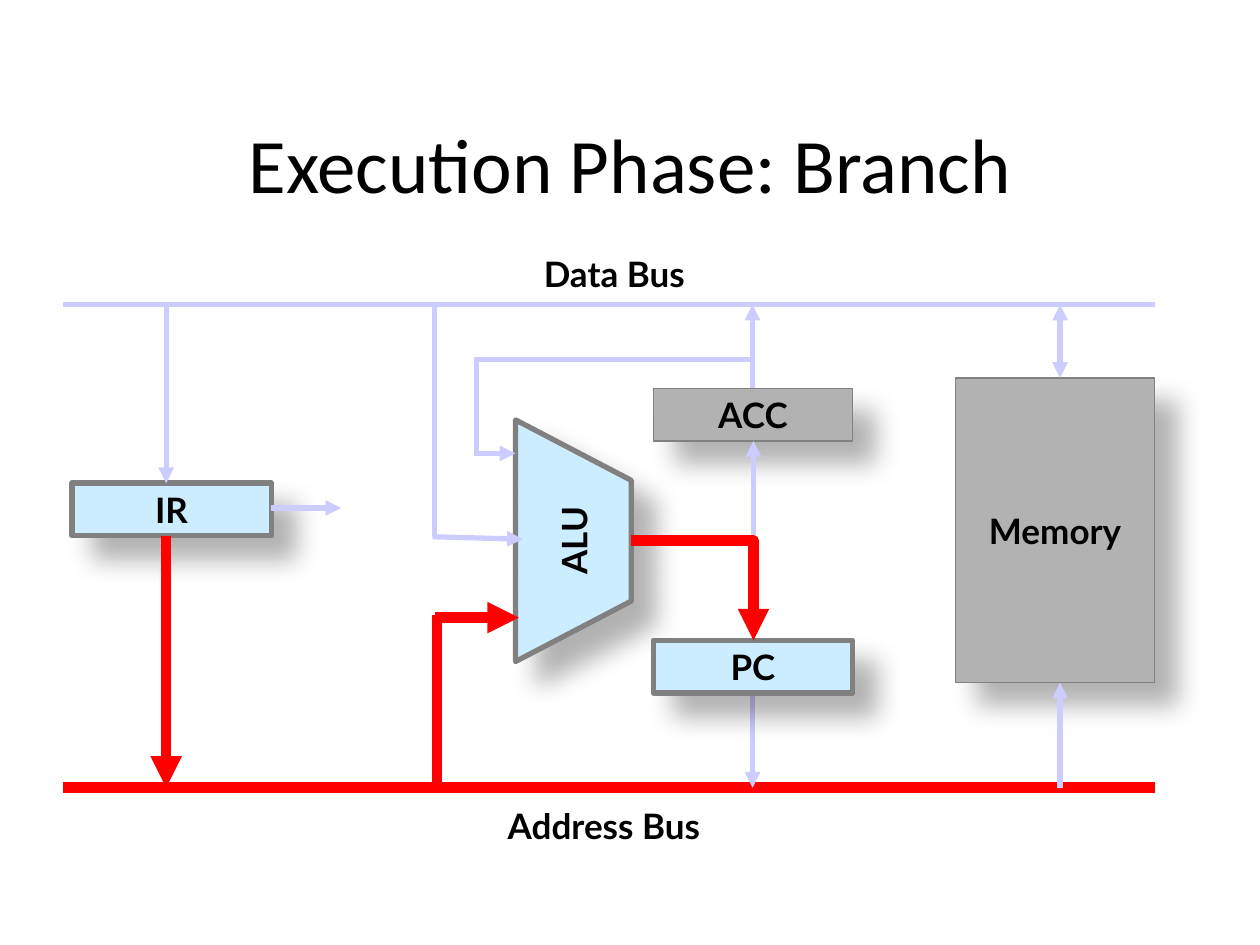
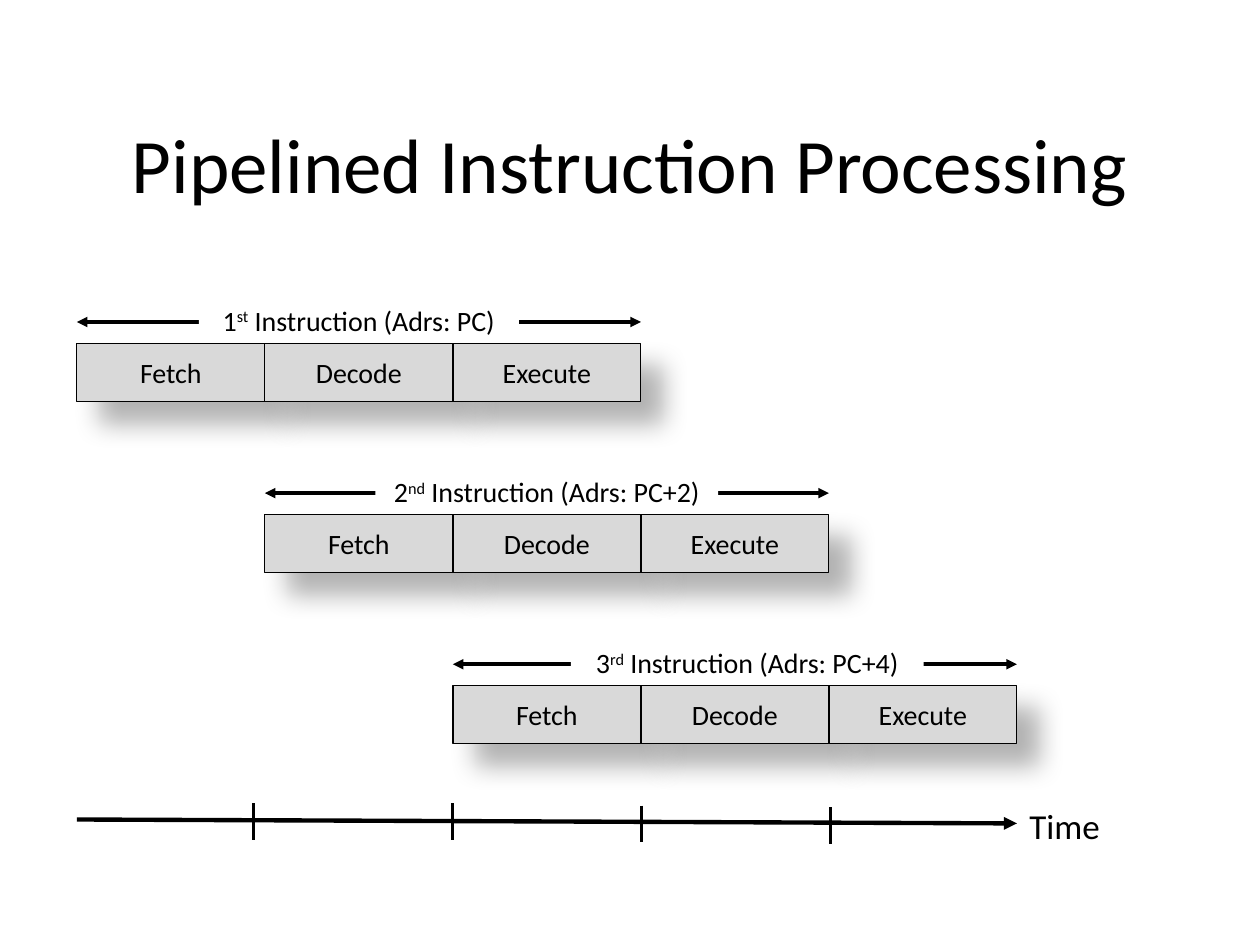
from lxml.etree import SubElement
from pptx import Presentation
from pptx.dml.color import RGBColor
from pptx.enum.shapes import MSO_CONNECTOR, MSO_SHAPE
from pptx.enum.text import MSO_ANCHOR, PP_ALIGN
from pptx.oxml.ns import qn
from pptx.util import Cm, Pt

COLORS = {"ink": "000000", "paper": "FFFFFF", "idle": "CCCCFF", "live": "FF0000",
          "edge": "808080", "off": "B2B2B2", "on": "CCECFF", "cell": "D9D9D9"}


def color(name):
    return RGBColor.from_string(COLORS[name])


# Shared parts
def write(shape, text, size, font="Calibri", bold=False, align=PP_ALIGN.CENTER,
          anchor=MSO_ANCHOR.MIDDLE):
    frame = shape.text_frame
    frame.word_wrap = True
    frame.vertical_anchor = anchor
    frame.text = text
    para = frame.paragraphs[0]
    para.alignment = align
    style(para.runs[0], size, font, bold)
    return para


def style(run, size, font="Calibri", bold=False):
    run.font.size, run.font.name, run.font.bold = Pt(size), font, bold
    run.font.color.rgb = color("ink")


def label(slide, x, y, w, h, text, size, **look):
    area = slide.shapes.add_textbox(Cm(x), Cm(y), Cm(w), Cm(h))
    return write(area, text, size, **look)


def title(slide, text):
    label(slide, 1.91, 1.7, 21.59, 3.18, text, 44)


def paint(shape, fill, edge, width):
    shape.fill.solid()
    shape.fill.fore_color.rgb = color(fill)
    shape.line.color.rgb = color(edge)
    shape.line.width = Pt(width)
    # Soft shadow to the lower right
    shape.shadow.inherit = False
    effects = shape._element.spPr.find(qn("a:effectLst"))
    cast = SubElement(effects, qn("a:outerShdw"), blurRad=str(Pt(15)), dist=str(Pt(18)),
                      dir="2700000", algn="ctr", rotWithShape="0")
    tint = SubElement(cast, qn("a:srgbClr"), val=COLORS["ink"])
    SubElement(tint, qn("a:alpha"), val="30000")


def block(slide, x, y, w, h, fill, edge, width):
    shape = slide.shapes.add_shape(MSO_SHAPE.RECTANGLE, Cm(x), Cm(y), Cm(w), Cm(h))
    paint(shape, fill, edge, width)
    return shape


def wire(slide, x1, y1, x2, y2, hue, width, ends="", bent=False):
    kind = MSO_CONNECTOR.ELBOW if bent else MSO_CONNECTOR.STRAIGHT
    line = slide.shapes.add_connector(kind, Cm(x1), Cm(y1), Cm(x2), Cm(y2))
    line.line.color.rgb = color(hue)
    line.line.width = Pt(width)
    props = line._element.spPr
    if bent:  # one corner only
        props.find(qn("a:prstGeom")).set("prst", "bentConnector2")
    for mark, tag in (("<", "a:headEnd"), (">", "a:tailEnd")):
        if mark in ends:
            SubElement(props.find(qn("a:ln")), qn(tag), type="triangle")
    SubElement(props, qn("a:effectLst"))


# Slide 1: data path between two buses
def alu(slide, mid_x, mid_y, w, h):
    left, top = mid_x - w / 2, mid_y - h / 2
    points = [(0, 0), (w, 0), (w * 0.75, h), (w * 0.25, h)]
    points = [(Cm(left + x), Cm(top + y)) for x, y in points]
    build = slide.shapes.build_freeform(*points[0], scale=1.0)
    build.add_line_segments(points[1:], close=True)
    shape = build.convert_to_shape()
    shape.rotation = 270
    paint(shape, "on", "edge", 3)
    write(shape, "ALU", 20, "Lato", True)


def datapath(slide, left, top):
    wide, low, unit_w, unit_h = 22.01, 9.74, 4.02, 1.06
    mem_x, acc_x, ir_x, mid = 20.1, 13.9, 2.08, 4.76
    mem_y, mem_h, acc_y, pc_y, ir_y = 1.48, 6.14, 1.69, 6.77, 3.6

    def run(x1, y1, x2, y2, ends="", live=False, bent=False):
        hue, width = ("live", 6) if live else ("idle", 3)
        wire(slide, left + x1, top + y1, left + x2, top + y2, hue, width, ends, bent)

    # Buses and the line that leaves PC
    run(0, low, wide, low, live=True)
    run(0, 0, wide, 0)
    run(acc_x, 7.2, acc_x, low, ">")
    for text, x, y in (("Data Bus", 7.2, -1.18), ("Address Bus", 6.99, 9.95)):
        label(slide, left + x, top + y, 7.83, 1.09, text, 20, font="Lato", bold=True,
              anchor=MSO_ANCHOR.TOP)

    # Units
    alu(slide, left + 10.29, top + mid, 4.87, 2.33)
    for text, x, y, h, live in (("Memory", 17.99, mem_y, mem_h, False),
                                ("IR", 0.18, ir_y, unit_h, True),
                                ("ACC", 11.9, acc_y, unit_h, False),
                                ("PC", 11.9, pc_y, unit_h, True)):
        fill, width = ("on", 3) if live else ("off", 0.75)
        shape = block(slide, left + x, top + y, unit_w, h, fill, "edge", width)
        write(shape, text, 20, "Lato", True)

    # Memory and IR wires
    run(mem_x, low, mem_x, mem_y + mem_h, ">")
    run(mem_x, mem_y, mem_x, 0, "<>")
    run(ir_x, 0, ir_x, ir_y, ">")
    run(ir_x, ir_y + unit_h, ir_x, low, ">", live=True)
    run(4.19, 4.1, 5.61, 4.1, ">")
    # ALU inputs
    run(acc_x, acc_y, acc_x, 0, ">")
    run(7.49, 6.31, 9.19, 6.31, ">", live=True)
    run(7.45, 4.68, 9.27, 4.73, ">")
    run(7.54, 6.26, 7.54, low, live=True)
    run(7.49, 4.68, 7.49, 0)
    run(acc_x, 1.1, 8.36, 1.1)
    run(8.33, 1.05, 8.33, 3)
    run(8.28, 3, 9.12, 3, ">")
    # ALU outputs
    run(11.45, mid, acc_x + 0.02, acc_y + unit_h, ">", bent=True)
    run(11.45, mid, acc_x + 0.02, pc_y, ">", live=True, bent=True)


# Slide 2: staggered instructions over a time axis
def stages(slide, left, top, step, order, rest, width, shift):
    wire(slide, left, top - 0.43, left + 3 * step, top - 0.43, "ink", 2, "<>")
    x = left + (3 * step - width) / 2 + shift
    area = slide.shapes.add_textbox(Cm(x), Cm(top - 0.93), Cm(width), Cm(0.93))
    area.fill.solid()
    area.fill.fore_color.rgb = color("paper")
    para = write(area, order[0], 16, anchor=MSO_ANCHOR.TOP)
    for text in (order[1:], f" Instruction (Adrs: {rest})"):
        run = para.add_run()
        run.text = text
        style(run, 16)
    para.runs[1]._r.get_or_add_rPr().set("baseline", "30000")
    for i, text in enumerate(("Fetch", "Decode", "Execute")):
        cell = block(slide, left + i * step, top, step, 1.17, "cell", "ink", 0.75)
        write(cell, text, 16)


def axis(slide, left, top):
    wire(slide, left, top, left + 18.95, top + 0.08, "ink", 2.5, ">")
    for x, y in ((3.56, -0.33), (7.57, -0.33), (11.38, -0.28), (15.19, -0.25)):
        wire(slide, left + x, top + y, left + x, top + y + 0.74, "ink", 2)
    label(slide, left + 18.95, top - 0.43, 2.46, 1.12, "Time", 20,
          align=PP_ALIGN.LEFT, anchor=MSO_ANCHOR.TOP)


def pipeline(slide, left, top):
    step, drop = 3.79, 3.45
    rows = (("1st", "PC", 6.45, 0), ("2nd", "PC+2", 6.91, 0), ("3rd", "PC+4", 7.11, 0.25))
    for i, row in enumerate(rows):
        stages(slide, left + i * step, top + i * drop, step, *row)
    axis(slide, left, top + 9.6)


def main():
    deck = Presentation()
    deck.slide_width, deck.slide_height = Cm(25.4), Cm(19.05)
    for text, draw, left, top in (
            ("Execution Phase: Branch", datapath, 1.27, 6.14),
            ("Pipelined Instruction Processing", pipeline, 1.55, 6.92)):
        slide = deck.slides.add_slide(deck.slide_layouts[6])
        title(slide, text)
        draw(slide, left, top)
    deck.save("out.pptx")


if __name__ == "__main__":
    main()
